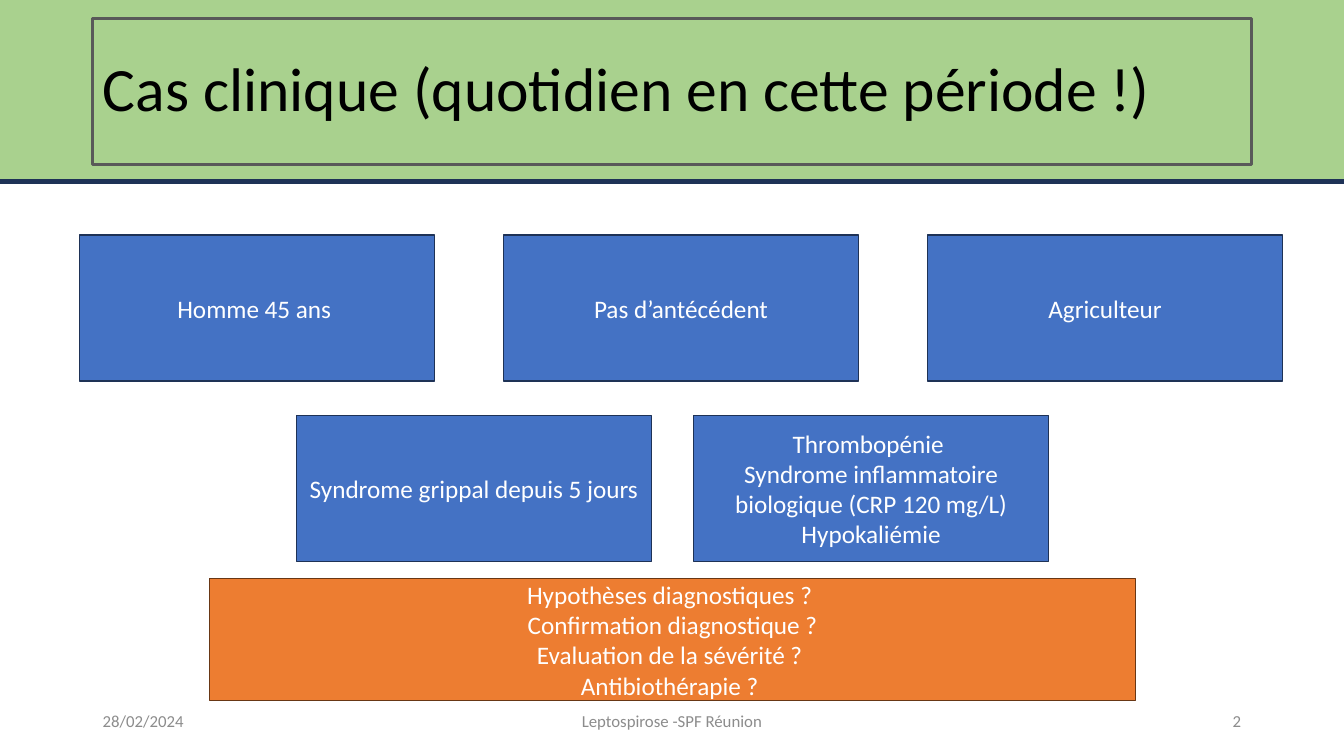
from lxml import etree
from pptx import Presentation
from pptx.dml.color import RGBColor
from pptx.enum.shapes import MSO_SHAPE
from pptx.enum.text import MSO_ANCHOR, MSO_AUTO_SIZE, PP_ALIGN
from pptx.util import Inches, Pt

RECT = MSO_SHAPE.RECTANGLE
MIDDLE = MSO_ANCHOR.MIDDLE
FIXED = MSO_AUTO_SIZE.NONE
LEFT, CENTER, RIGHT = PP_ALIGN.LEFT, PP_ALIGN.CENTER, PP_ALIGN.RIGHT

WIDE, HIGH = 13.33, 7.5
EDGE = 0.92
CARD_W, CARD_H = 3.52, 1.45
NAVY, BLUE, GREEN, ORANGE = "1E3256", "4472C4", "A9D18E", "ED7D31"

FACTS = [
    (0.79, 4.205, 2.33, [["Homme 45 ans "], ["Pas d’antécédent"], ["Agriculteur"]]),
    (2.94, 3.94, 4.12, [
        ["Syndrome grippal depuis 5 jours"],
        ["Thrombopénie ",
         "Syndrome inflammatoire biologique (CRP 120 mg/L)",
         "Hypokaliémie"],
    ]),
]
ASKS = [
    "Hypothèses diagnostiques ? ",
    "Confirmation diagnostique ?",
    "Evaluation de la sévérité ? ",
    "Antibiothérapie ? ",
]
FOOT = [
    (EDGE, 3, "28/02/2024", LEFT),
    ((WIDE - 4.5) / 2, 4.5, "Leptospirose -SPF Réunion", CENTER),
    (WIDE - EDGE - 3, 3, "2", RIGHT),
]


def color(code):
    return RGBColor.from_string(code)


def area(left, top, width, height):
    return [Inches(n) for n in (left, top, width, height)]


def write(shape, lines, size=18, ink="FFFFFF", align=CENTER, space=1.0):
    frame = shape.text_frame
    frame.word_wrap = True
    frame.auto_size = FIXED
    frame.vertical_anchor = MIDDLE
    frame.text = "\n".join(lines)
    for para in frame.paragraphs:
        para.alignment = align
        para.line_spacing = space
        for run in para.runs:
            run.font.name = "Calibri"
            run.font.size = Pt(size)
            run.font.color.rgb = color(ink)


def border(shape, ink, width):
    shape.line.color.rgb = color(ink)
    shape.line.width = Pt(width)


def box(slide, place, fill, ink, width=1):
    shape = slide.shapes.add_shape(RECT, *area(*place))
    shape.shadow.inherit = False
    shape.fill.solid()
    shape.fill.fore_color.rgb = color(fill)
    border(shape, ink, width)
    return shape


def header(slide):
    title = slide.shapes.title
    title.left, title.top, title.width, title.height = area(
        EDGE, 0.18, WIDE - 2 * EDGE, CARD_H)
    border(title, "595959", 2.25)
    write(title, ["Cas clinique (quotidien en cette période !)"],
          size=44, ink="000000", align=LEFT, space=0.9)
    band = box(slide, (-0.49, -0.22, 14.32, 2.02), GREEN, NAVY, 3)
    title.element.addprevious(band.element)


def cards(slide, left, step, top, texts):
    for col, lines in enumerate(texts):
        card = box(slide, (left + col * step, top, CARD_W, CARD_H), BLUE, NAVY)
        write(card, lines)


def footer(slide):
    for left, width, text, align in FOOT:
        note = slide.shapes.add_textbox(*area(left, 6.95, width, 0.4))
        write(note, [text], size=12, ink="8C8C8C", align=align)


def main():
    deck = Presentation()
    deck.slide_width, deck.slide_height = Inches(WIDE), Inches(HIGH)
    slide = deck.slides.add_slide(deck.slide_layouts[5])
    header(slide)
    footer(slide)
    for row in FACTS:
        cards(slide, *row)
    write(box(slide, (2.08, 5.74, 9.18, 1.21), ORANGE, "683715"), ASKS)
    deck.save("out.pptx")


if __name__ == "__main__":
    main()
